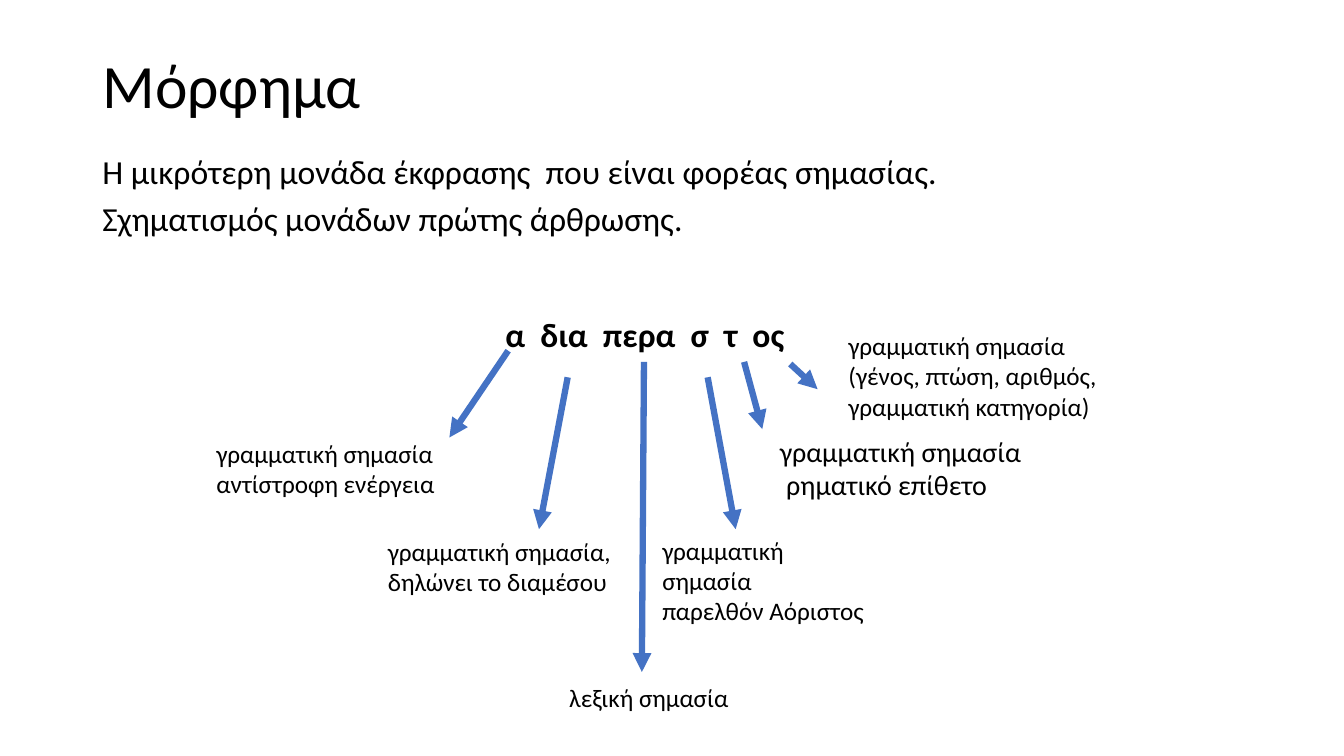
from dataclasses import dataclass

from lxml import etree
from pptx import Presentation
from pptx.dml.color import RGBColor
from pptx.enum.shapes import MSO_CONNECTOR
from pptx.enum.text import MSO_ANCHOR, PP_ALIGN
from pptx.oxml.ns import qn
from pptx.util import Pt

LEFT = PP_ALIGN.LEFT
TOP = MSO_ANCHOR.TOP
MIDDLE = MSO_ANCHOR.MIDDLE
STRAIGHT = MSO_CONNECTOR.STRAIGHT


@dataclass(frozen=True)
class Theme:
    font: str = "Calibri"
    ink: RGBColor = RGBColor(0, 0, 0)
    blue: RGBColor = RGBColor(0x44, 0x72, 0xC4)
    title: int = 44
    body: int = 24
    large: int = 20
    label: int = 18
    stroke: float = 4.5


class Board:
    def __init__(self, theme, slide):
        self.theme = theme
        self.slide = slide

    def typeset(self, shape, lines, size, bold=False, anchor=TOP, space=1.0, gap=0):
        frame = shape.text_frame
        frame.word_wrap = True
        frame.vertical_anchor = anchor
        frame.text = "\n".join(lines)
        for index, para in enumerate(frame.paragraphs):
            para.alignment = LEFT
            para.line_spacing = space
            para.space_before = Pt(gap if index else 0)
            for run in para.runs:
                run.font.name = self.theme.font
                run.font.size = Pt(size)
                run.font.bold = bold
                run.font.color.rgb = self.theme.ink

    def title(self, box, text):
        shape = self.slide.shapes.title
        shape.left, shape.top, shape.width, shape.height = map(Pt, box)
        self.typeset(shape, [text], self.theme.title, anchor=MIDDLE, space=0.9)

    def text(self, box, lines, size, **style):
        shape = self.slide.shapes.add_textbox(*map(Pt, box))
        self.typeset(shape, lines, size, **style)

    def arrow(self, start, end):
        arrow = self.slide.shapes.add_connector(STRAIGHT, *map(Pt, start + end))
        arrow.line.color.rgb = self.theme.blue
        arrow.line.width = Pt(self.theme.stroke)
        props = arrow.element.spPr
        etree.SubElement(props.find(qn("a:ln")), qn("a:tailEnd"), type="triangle")
        etree.SubElement(props, qn("a:effectLst"))


def main():
    deck = Presentation()
    deck.slide_width, deck.slide_height = Pt(960), Pt(540)
    theme = Theme()
    board = Board(theme, deck.slides.add_slide(deck.slide_layouts[5]))

    board.title((66, 29, 799, 68), "Μόρφημα")
    board.text(
        (66, 110, 828, 68),
        ["Η µικρότερη µονάδα έκφρασης  που είναι φορέας σηµασίας.",
         "Σχηµατισµός µονάδων πρώτης άρθρωσης. "],
        theme.body, space=0.8, gap=10,
    )
    board.text((348.5, 220.5, 228, 36), [" α  δια  περα  σ  τ  ος"],
               theme.body, bold=True)

    arrows = [
        ((363, 250.5), (321, 312.5)),
        ((405.5, 269.5), (385, 378)),
        ((460, 258.5), (458.5, 480)),
        ((505.5, 269.5), (525.5, 378)),
        ((531.5, 258.5), (544.5, 306.5)),
        ((564.5, 260), (584, 278)),
    ]
    for start, end in arrows:
        board.arrow(start, end)

    sense = "γραμματική σημασία"
    labels = [
        ((147.5, 309.5, 216, 51), [sense + " αντίστροφη ενέργεια"], theme.label),
        ((270, 379.5, 175, 51), [sense + ",", "δηλώνει το διαμέσου"], theme.label),
        ((399.5, 484, 133, 29), ["λεξική σημασία"], theme.label),
        ((466, 378.5, 168.5, 51), [sense, "παρελθόν Αόριστος"], theme.label),
        ((550, 306.5, 216, 85), [sense, " ρηματικό επίθετο"], theme.large),
        ((599, 232.5, 216, 73),
         [sense + " ", "(γένος, πτώση, αριθμός, γραμματική κατηγορία)"], theme.label),
    ]
    for box, lines, size in labels:
        board.text(box, lines, size)

    deck.save("out.pptx")


if __name__ == "__main__":
    main()
